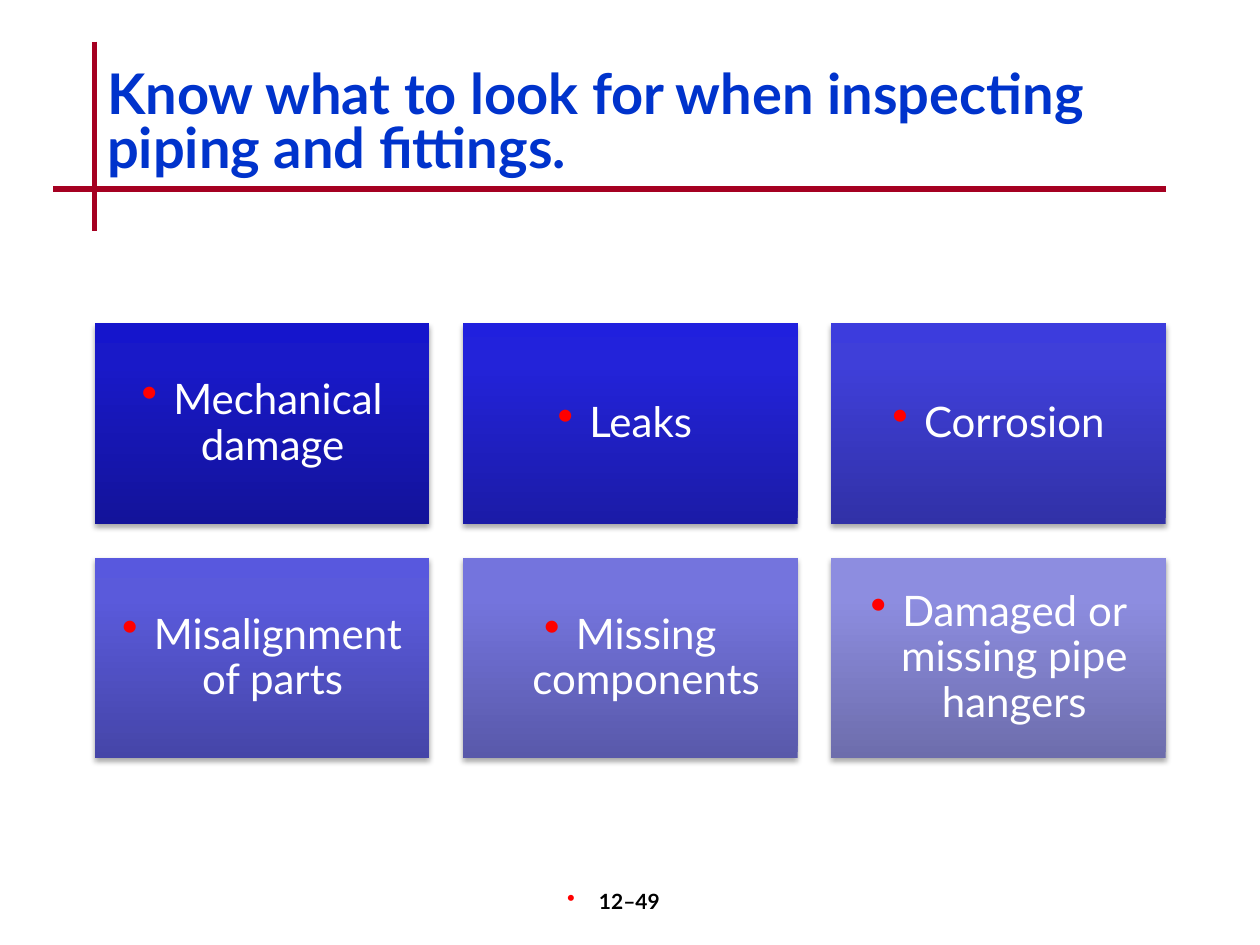
from lxml.etree import SubElement
from pptx import Presentation
from pptx.dml.color import RGBColor
from pptx.enum.shapes import MSO_CONNECTOR as Connector, MSO_SHAPE as Shape
from pptx.enum.text import MSO_ANCHOR as Anchor, PP_ALIGN as Align
from pptx.oxml.ns import qn
from pptx.util import Cm, Pt

COLORS = {"rule": "A50021", "title": "0033CC", "bullet": "FF0000",
          "card_text": "FFFFFF", "number": "000000", "shadow": "000000"}
FONT = "Lato"
HAZARDS = [
    ("Mechanical damage ", ("13139A", "1919C8", "1515CC")),
    ("Leaks ", ("1B1BA7", "2323D9", "2020DE")),
    ("Corrosion", ("3131A7", "3F3FD9", "3C3CDD")),
    ("Misalignment of parts ", ("4545A8", "5A5ADB", "5858DE")),
    ("Missing components", ("5959AA", "7474DD", "7373E0")),
    ("Damaged or missing pipe hangers", ("6D6DAC", "8D8DE0", "8C8CE2")),
]


def add_child(parent, tag, **attributes):
    """Append a drawing element with the given attributes."""
    return SubElement(parent, qn(tag), {key: str(value) for key, value in attributes.items()})


def write(frame, text, *, size, color, bold=False, align=Align.LEFT, spacing=1.0,
          anchor=Anchor.TOP, bullet=False):
    """Fill a text frame with one formatted paragraph."""
    frame.word_wrap = True
    frame.vertical_anchor = anchor
    paragraph = frame.paragraphs[0]
    if bullet:
        properties = paragraph._p.get_or_add_pPr()
        properties.set("marL", str(Cm(0.64)))
        properties.set("indent", str(Cm(-0.64)))
        add_child(add_child(properties, "a:buClr"), "a:srgbClr", val=COLORS["bullet"])
        add_child(properties, "a:buSzPct", val=110000)
        add_child(properties, "a:buChar", char="•")
    paragraph.alignment = align
    paragraph.line_spacing = spacing
    run = paragraph.add_run()
    run.text = text
    run.font.name = FONT
    run.font.size = Pt(size)
    run.font.bold = bold
    run.font.color.rgb = RGBColor.from_string(COLORS[color])


def add_rule(slide, x1, y1, x2, y2):
    """Draw one straight rule between two points in centimetres."""
    rule = slide.shapes.add_connector(Connector.STRAIGHT, Cm(x1), Cm(y1), Cm(x2), Cm(y2))
    rule.line.color.rgb = RGBColor.from_string(COLORS["rule"])
    rule.line.width = Pt(3)
    add_child(rule.element.spPr, "a:effectLst")


def add_heading(slide, left, top, width, height):
    """Place the title and the crossed rules around its lower left corner."""
    add_rule(slide, left, top - 0.48, left, top + 3.33)
    add_rule(slide, left - 0.84, top + 2.49, left + width, top + 2.49)
    title = slide.shapes.add_textbox(Cm(left), Cm(top), Cm(width), Cm(height))
    write(title.text_frame, "Know what to look for when inspecting piping and fittings.",
          size=32, color="title", bold=True, spacing=0.8)


def shade(card, tones):
    """Give a card its vertical gradient and soft shadow."""
    card.line.fill.background()
    properties = card.element.spPr
    gradient = add_child(properties, "a:gradFill", rotWithShape=1)
    stops = add_child(gradient, "a:gsLst")
    for position, tone in zip((0, 80000, 100000), tones):
        add_child(add_child(stops, "a:gs", pos=position), "a:srgbClr", val=tone)
    add_child(gradient, "a:lin", ang=16200000, scaled=0)
    properties.find(qn("a:ln")).addprevious(gradient)
    card.shadow.inherit = False
    shadow = add_child(properties.find(qn("a:effectLst")), "a:outerShdw", blurRad=Pt(3.1),
                       dist=Pt(1.8), dir=5400000, rotWithShape=0)
    tint = add_child(shadow, "a:srgbClr", val=COLORS["shadow"])
    add_child(tint, "a:alpha", val=35000)


def add_hazards(slide, left, top, width, columns=3):
    """Lay out the hazard cards in a grid with equal gaps."""
    card_width = width / (columns + 0.1 * (columns - 1))
    card_height = 0.6 * card_width
    gap = 0.1 * card_width
    for index, (hazard, tones) in enumerate(HAZARDS):
        row, column = divmod(index, columns)
        card = slide.shapes.add_shape(
            Shape.RECTANGLE, Cm(left + column * (card_width + gap)),
            Cm(top + row * (card_height + gap)), Cm(card_width), Cm(card_height))
        shade(card, tones)
        frame = card.text_frame
        frame.margin_left = frame.margin_right = Cm(0.25)
        frame.margin_top = frame.margin_bottom = Cm(0.25)
        write(frame, hazard, size=24, color="card_text", align=Align.CENTER,
              spacing=0.9, anchor=Anchor.MIDDLE, bullet=True)


def add_page_number(slide, left, top, width, height):
    """Place the bulleted page number."""
    number = slide.shapes.add_textbox(Cm(left), Cm(top), Cm(width), Cm(height))
    number.text_frame.margin_right = Cm(0.7)
    write(number.text_frame, "12–49", size=12, color="number", bold=True,
          align=Align.CENTER, bullet=True)


def main():
    """Build and save the slide."""
    deck = Presentation()
    deck.slide_width, deck.slide_height = Cm(25.4), Cm(19.05)
    slide = deck.slides.add_slide(deck.slide_layouts[6])
    add_heading(slide, 1.91, 1.32, 21.59, 2.54)
    add_hazards(slide, 1.91, 6.52, 21.59)
    add_page_number(slide, 9.95, 17.78, 5.29, 1.27)
    deck.save("out.pptx")


if __name__ == "__main__":
    main()
